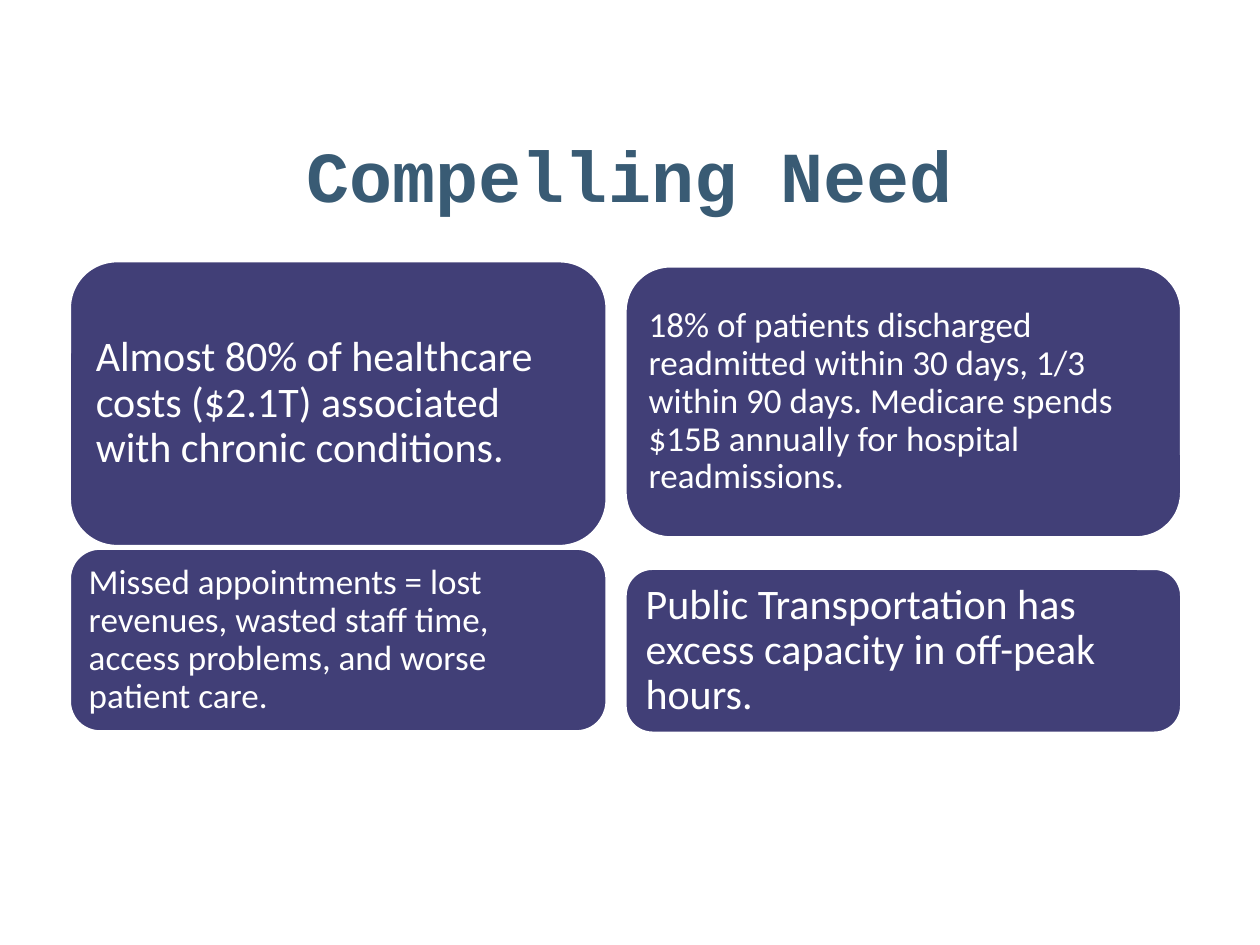
"""Build the Compelling Need slide with four statement cards."""
import pptx
import pptx.util
import pptx.dml.color
import pptx.enum.shapes
import pptx.enum.text

Pt = pptx.util.Pt
RGB = pptx.dml.color.RGBColor.from_string
ANCHOR = pptx.enum.text.MSO_ANCHOR
ALIGN = pptx.enum.text.PP_ALIGN

COLORS = {"title": "395B74", "card": "413F77", "white": "FFFFFF"}
TITLE = "Compelling Need"
COLUMNS = [
    {"left": 39.6, "width": 307.4, "cards": [
        (149, 163.4, 24, "Almost 80% of healthcare costs ($2.1T) associated with chronic conditions."),
        (313.2, 105.1, 20, "Missed appointments = lost revenues, wasted staff time, "
                           "access problems, and worse patient care."),
    ]},
    {"left": 357.1, "width": 318.2, "cards": [
        (151.9, 155.5, 20, "18% of patients discharged readmitted within 30 days, 1/3 within 90 days. "
                           "Medicare spends $15B annually for hospital readmissions."),
        (324.7, 94.3, 24, "Public Transportation has excess capacity in off-peak hours."),
    ]},
]
TITLE_FONT = {"name": "Courier New", "size": Pt(41), "bold": True}
TITLE_FRAME = {"vertical_anchor": ANCHOR.TOP, "margin_top": Pt(36.8), "margin_bottom": 0,
               "auto_size": pptx.enum.text.MSO_AUTO_SIZE.NONE, "word_wrap": True}
MARGINS = ("margin_left", "margin_top", "margin_right", "margin_bottom")


def apply(target, values):
    """Set each named attribute on the target."""
    for name, value in values.items():
        setattr(target, name, value)


def write(tf, text, frame, para, font, color):
    """Fill a text frame with one formatted paragraph."""
    apply(tf, frame)
    p = tf.paragraphs[0]
    apply(p, para)
    r = p.add_run()
    r.text = text
    apply(r.font, font)
    r.font.color.rgb = RGB(COLORS[color])


def add_card(s, left, top, width, height, size, text):
    """Add a rounded card whose inset follows its text size."""
    sp = s.shapes.add_shape(pptx.enum.shapes.MSO_SHAPE.ROUNDED_RECTANGLE,
                            Pt(left), Pt(top), Pt(width), Pt(height))
    sp.shadow.inherit = False
    sp.fill.solid()
    sp.fill.fore_color.rgb = RGB(COLORS["card"])
    sp.line.color.rgb = RGB(COLORS["white"])
    sp.line.width = Pt(2)
    frame = {"word_wrap": True, "vertical_anchor": ANCHOR.MIDDLE,
             **dict.fromkeys(MARGINS, Pt(size * 0.3))}
    write(sp.text_frame, text, frame, {"alignment": ALIGN.LEFT, "line_spacing": 0.9},
          {"name": "Calibri", "size": Pt(size)}, "white")


def main():
    """Create and save the slide."""
    prs = pptx.Presentation()
    apply(prs, {"slide_width": Pt(720), "slide_height": Pt(540)})
    s = prs.slides.add_slide(prs.slide_layouts[5])
    title = s.shapes.title
    apply(title, {"left": Pt(36), "top": Pt(38.2), "width": Pt(648), "height": Pt(73.4)})
    write(title.text_frame, TITLE, TITLE_FRAME, {"alignment": ALIGN.CENTER}, TITLE_FONT, "title")
    for column in COLUMNS:
        for top, height, size, text in column["cards"]:
            add_card(s, column["left"], top, column["width"], height, size, text)
    prs.save("out.pptx")


if __name__ == "__main__":
    main()
